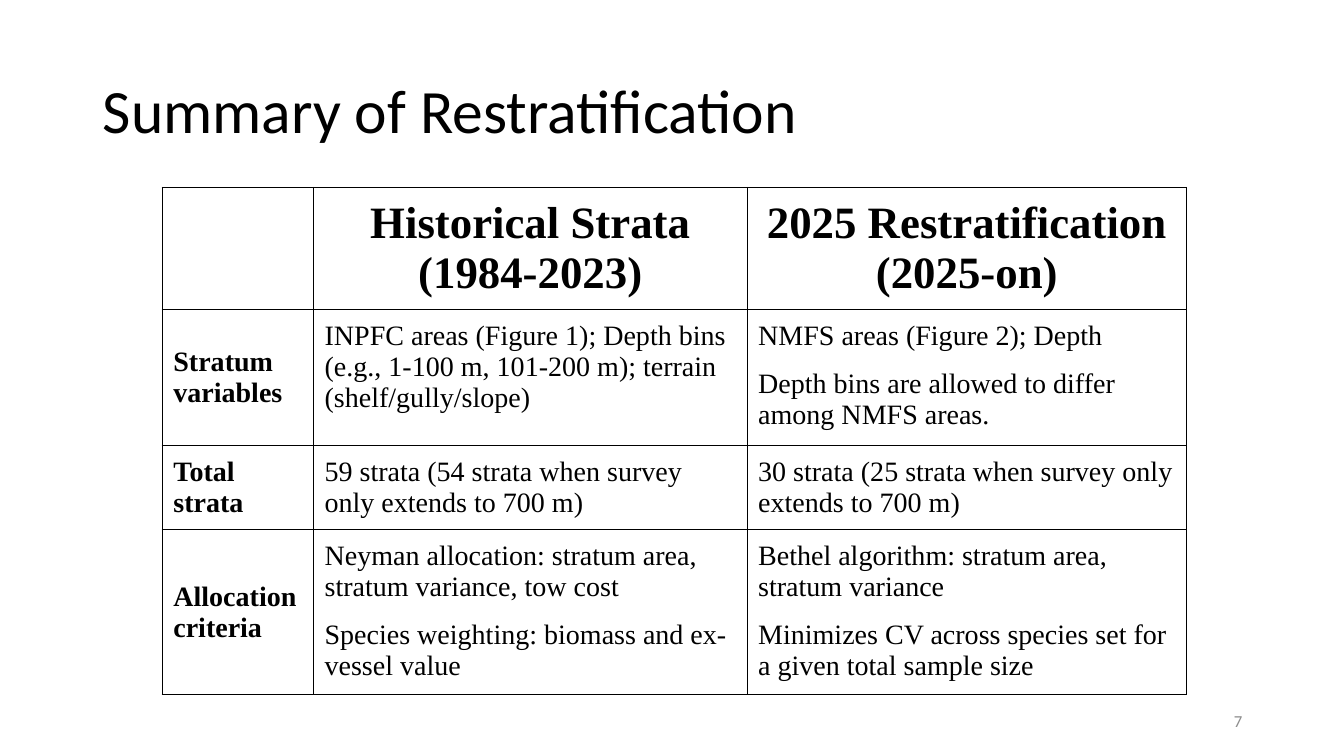
from dataclasses import dataclass

from lxml.etree import SubElement
from pptx import Presentation
from pptx.dml.color import RGBColor
from pptx.enum.text import MSO_ANCHOR, MSO_AUTO_SIZE, PP_ALIGN
from pptx.oxml.ns import qn
from pptx.util import Inches, Pt


@dataclass(frozen=True)
class Theme:
    text: str = "000000"
    muted: str = "8C8C8C"
    sans: str = "Calibri"
    serif: str = "Times New Roman"
    title: int = 44
    header: int = 32
    body: int = 20
    number: int = 12


THEME = Theme()
COLUMNS = [1.5, 4.3, 4.36]
ROWS = [1.16, 1.35, 0.8, 1.64]
# Each cell is a list of paragraphs
STRATA = [
    [[], ["Historical Strata (1984-2023)"], ["2025 Restratification (2025-on)"]],
    [["Stratum variables"],
     ["INPFC areas (Figure 1); Depth bins (e.g., 1-100 m, 101-200 m); "
      "terrain (shelf/gully/slope)"],
     ["NMFS areas (Figure 2); Depth",
      "Depth bins are allowed to differ among NMFS areas."]],
    [["Total strata"],
     ["59 strata (54 strata when survey only extends to 700 m)"],
     ["30 strata (25 strata when survey only extends to 700 m)"]],
    [["Allocation criteria"],
     ["Neyman allocation: stratum area, stratum variance, tow cost",
      "Species weighting: biomass and ex-vessel value"],
     ["Bethel algorithm: stratum area, stratum variance",
      "Minimizes CV across species set for a given total sample size"]],
]


def set_all(obj, values):
    for name, value in values.items():
        setattr(obj, name, value)


def add_text(p, text, size, font, color=THEME.text, bold=False, **layout):
    r = p.add_run()
    r.text = text
    set_all(r.font, {"size": Pt(size), "name": font, "bold": bold})
    r.font.color.rgb = RGBColor.from_string(color)
    set_all(p, layout)


def set_borders(cell):
    tc_pr = cell._tc.get_or_add_tcPr()
    for side in ("lnL", "lnR", "lnT", "lnB"):
        ln = SubElement(tc_pr, qn(f"a:{side}"), w=str(Pt(1)))
        fill = SubElement(ln, qn("a:solidFill"))
        SubElement(fill, qn("a:srgbClr"), val=THEME.text)


def build_title(s, left, top, width, height):
    sp = s.shapes.title
    set_all(sp, {"left": Inches(left), "top": Inches(top),
                 "width": Inches(width), "height": Inches(height)})
    tf = sp.text_frame
    set_all(tf, {"vertical_anchor": MSO_ANCHOR.MIDDLE, "word_wrap": True,
                 "auto_size": MSO_AUTO_SIZE.NONE})
    add_text(tf.paragraphs[0], "Summary of Restratification", THEME.title,
             THEME.sans, alignment=PP_ALIGN.LEFT, line_spacing=0.9)


def fill_cell(cell, paragraphs, is_header, is_label):
    margins = ("margin_left", "margin_right", "margin_top", "margin_bottom")
    set_all(cell, dict.fromkeys(margins, Inches(0.11)))
    cell.vertical_anchor = MSO_ANCHOR.MIDDLE if is_label else MSO_ANCHOR.TOP
    set_borders(cell)
    cell.fill.background()
    tf = cell.text_frame
    for i, text in enumerate(paragraphs):
        p = tf.add_paragraph() if i else tf.paragraphs[0]
        add_text(p, text, THEME.header if is_header else THEME.body,
                 THEME.serif, bold=is_header or is_label, space_before=Pt(12),
                 alignment=PP_ALIGN.CENTER if is_header else PP_ALIGN.LEFT)


def build_table(s, left, top):
    table = s.shapes.add_table(
        len(ROWS), len(COLUMNS), Inches(left), Inches(top),
        Inches(sum(COLUMNS)), Inches(sum(ROWS))).table
    set_all(table, {"first_row": False, "horz_banding": False})
    for column, width in zip(table.columns, COLUMNS):
        column.width = Inches(width)
    for row, height in zip(table.rows, ROWS):
        row.height = Inches(height)
    for i, row in enumerate(STRATA):
        for j, paragraphs in enumerate(row):
            fill_cell(table.cell(i, j), paragraphs, i == 0, i > 0 and j == 0)


def build_number(s, left, top, width, height):
    tf = s.shapes.add_textbox(Inches(left), Inches(top), Inches(width),
                              Inches(height)).text_frame
    set_all(tf, {"word_wrap": True, "vertical_anchor": MSO_ANCHOR.MIDDLE})
    add_text(tf.paragraphs[0], "7", THEME.number, THEME.sans, THEME.muted,
             alignment=PP_ALIGN.RIGHT)


def main():
    prs = Presentation()
    set_all(prs, {"slide_width": Inches(13.33), "slide_height": Inches(7.5)})
    s = prs.slides.add_slide(prs.slide_layouts.get_by_name("Title Only"))
    build_table(s, 1.61, 1.86)
    build_title(s, 0.92, 0.4, 11.5, 1.45)
    build_number(s, 9.42, 6.95, 3, 0.4)
    prs.save("out.pptx")


if __name__ == "__main__":
    main()
